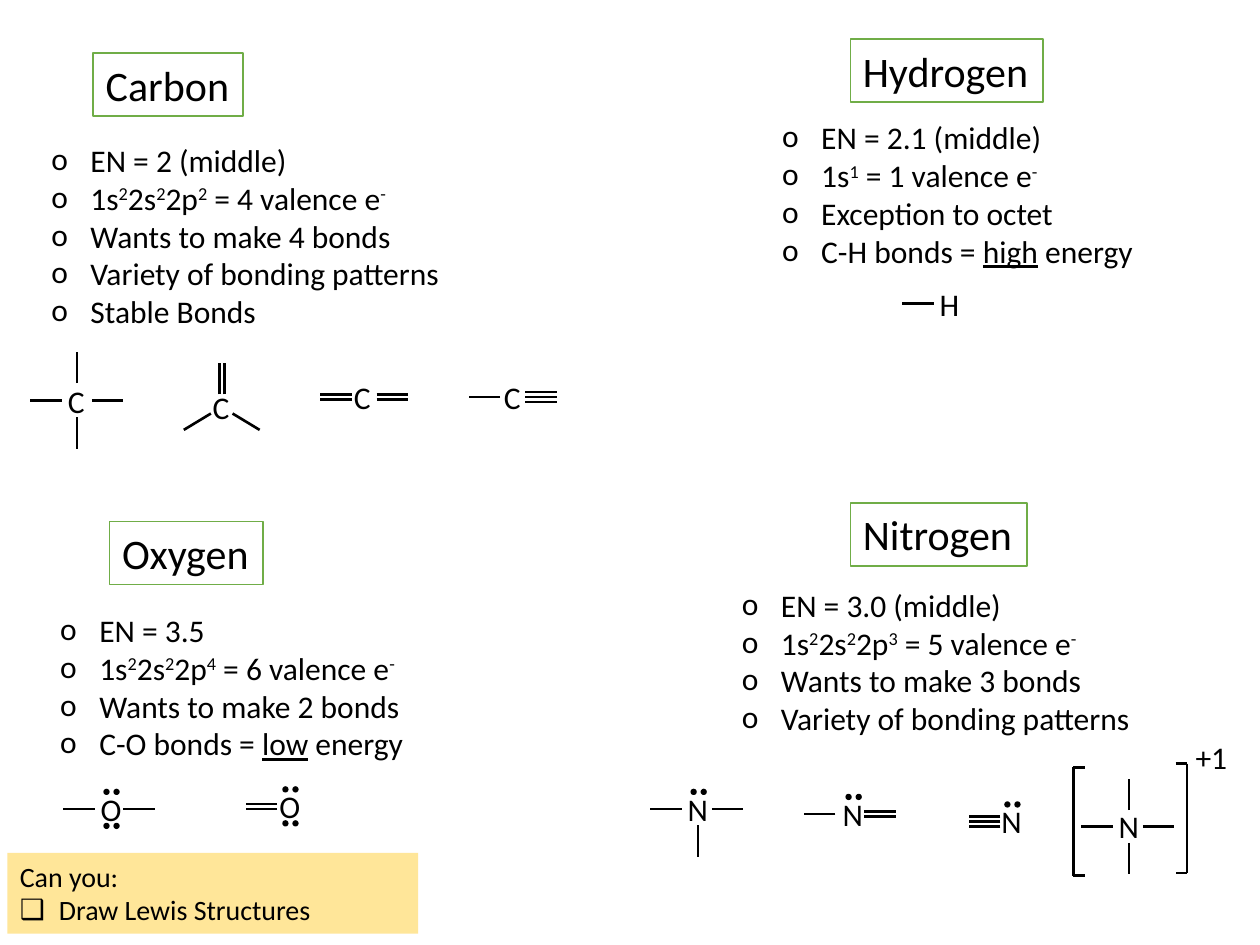
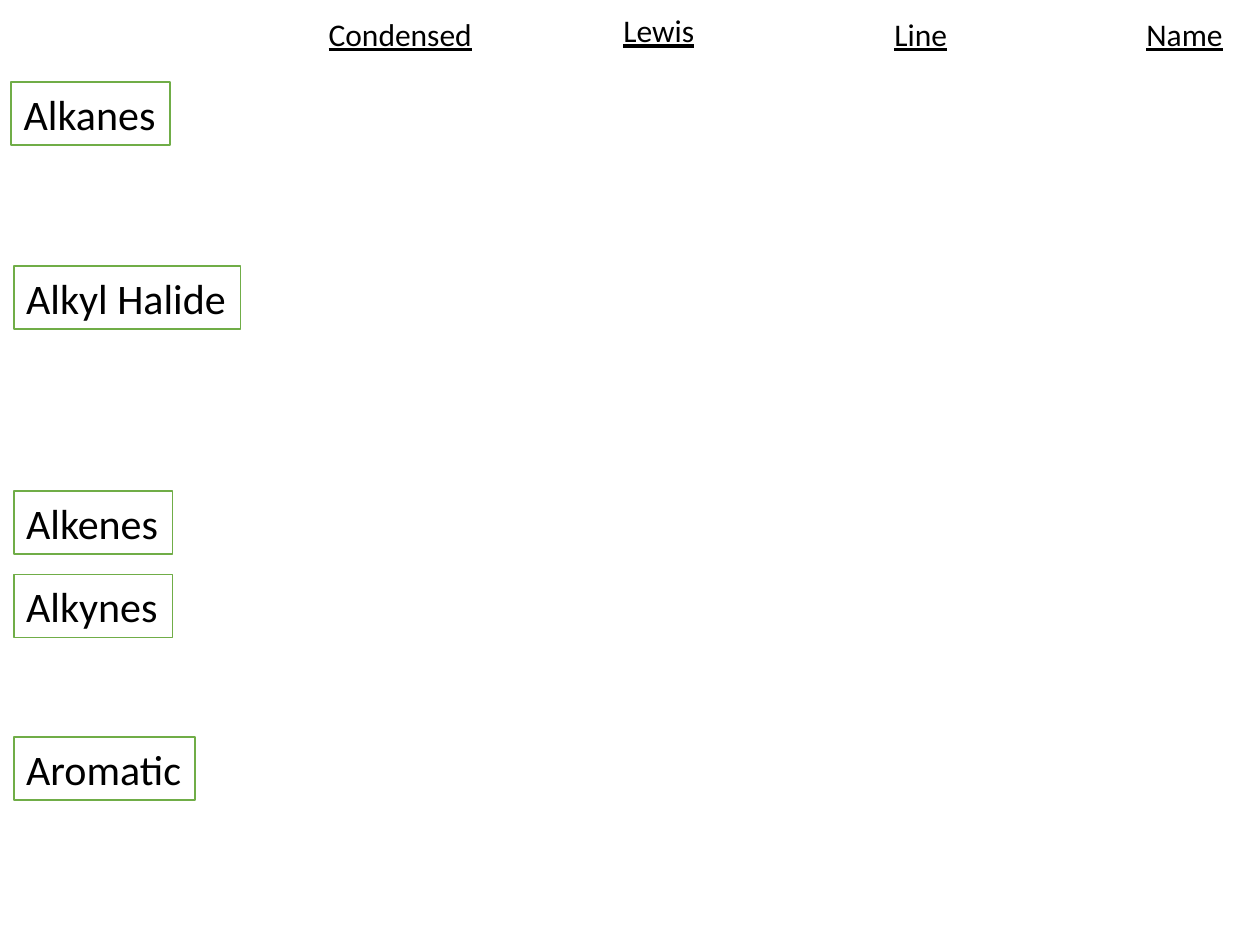
"""Builds two chemistry slides: bonding of four elements and hydrocarbon families."""
from lxml import etree
from pptx import Presentation, util as u
from pptx.dml.color import RGBColor
from pptx.enum import shapes, text
from pptx.oxml.ns import qn

BLACK = RGBColor(0x00, 0x00, 0x00)
WHITE = RGBColor(0xFF, 0xFF, 0xFF)
GREEN = RGBColor(0x70, 0xAD, 0x47)
YELLOW = RGBColor(0xFF, 0xE6, 0x99)
FONT = "Calibri"

deck = Presentation()
deck.slide_width, deck.slide_height = u.Inches(10), u.Inches(7.5)
CELL = deck.slide_width // 1000  # square grid of 1000 columns by 750 rows
HEADING_HEIGHT, LABEL_HEIGHT, INDENT = 50, 40, 31
BOND_LENGTH, BOND_GAP, DOT = 25, 4, 5


def write(shape, lines, size, wrap=False):
    """Write (bullet, text) lines; '|' parts runs, '^' raises and '_' underlines one."""
    frame = shape.text_frame
    frame.word_wrap = wrap
    frame.auto_size = text.MSO_AUTO_SIZE.SHAPE_TO_FIT_TEXT
    frame.vertical_anchor = text.MSO_ANCHOR.TOP
    for number, (bullet, line) in enumerate(lines):
        paragraph = frame.paragraphs[0] if number == 0 else frame.add_paragraph()
        paragraph.alignment = text.PP_ALIGN.LEFT
        if bullet:
            properties = paragraph._p.get_or_add_pPr()
            properties.set("marL", str(INDENT * CELL))
            properties.set("indent", str(-INDENT * CELL))
            etree.SubElement(properties, qn("a:buFont"), typeface=FONT)
            etree.SubElement(properties, qn("a:buChar"), char=bullet)
        for part in line.split("|"):
            run = paragraph.add_run()
            run.text = part.lstrip("^_")
            run.font.name, run.font.size = FONT, u.Pt(size)
            run.font.color.rgb = BLACK
            if part.startswith("_"):
                run.font.underline = True
            if part.startswith("^"):
                run.font._element.set("baseline", "30000")


def draw_line(canvas, *ends):
    """Draw a black line between two grid points."""
    line = canvas.add_connector(
        shapes.MSO_CONNECTOR.STRAIGHT, *(round(end * CELL) for end in ends))
    line.line.color.rgb, line.line.width = BLACK, u.Pt(1.5)
    etree.SubElement(line._element.spPr, qn("a:effectLst"))


elements, families = (deck.slides.add_slide(deck.slide_layouts[6]) for _ in range(2))

headings = [
    (elements, "Carbon", 74, 42, 119),
    (elements, "Hydrogen", 675, 31, 153),
    (elements, "Oxygen", 87, 414, 122),
    (elements, "Nitrogen", 675, 399, 140),
    (families, "Alkanes", 9, 65, 126),
    (families, "Alkyl Halide", 11, 211, 180),
    (families, "Alkenes", 11, 390, 126),
    (families, "Alkynes", 11, 456, 126),
    (families, "Aromatic", 11, 585, 144),
]
for slide, name, left, top, width in headings:
    heading = slide.shapes.add_shape(
        shapes.MSO_SHAPE.RECTANGLE,
        left * CELL, top * CELL, width * CELL, HEADING_HEIGHT * CELL)
    heading.shadow.inherit = False
    heading.fill.solid()
    heading.fill.fore_color.rgb = WHITE
    heading.line.color.rgb, heading.line.width = GREEN, u.Pt(1)
    write(heading, [("", name)], 24)

facts = [
    (31, 107, ["EN = 2 (middle)", "1s|^2|2s|^2|2p|^2| = 4 valence e|^-",
               "Wants to make 4 bonds", "Variety of bonding patterns", "Stable Bonds"]),
    (611, 89, ["EN = 2.1 (middle)", "1s|^1| = 1 valence e|^-",
               "Exception to octet", "C-H bonds = |_high| energy"]),
    (38, 480, ["EN = 3.5", "1s|^2|2s|^2|2p|^4| = 6 valence e|^-",
               "Wants to make 2 bonds", "C-O bonds = |_low| energy"]),
    (579, 460, ["EN = 3.0 (middle)", "1s|^2|2s|^2|2p|^3| = 5 valence e|^-",
                "Wants to make 3 bonds", "Variety of bonding patterns"]),
]
for left, top, lines in facts:
    fact_list = elements.shapes.add_textbox(
        left * CELL, top * CELL, 346 * CELL, (10 + 30 * len(lines)) * CELL)
    write(fact_list, [("o", line) for line in lines], 18, wrap=True)

COMPASS = {"N": (0, -1), "E": (1, 0), "S": (0, 1), "W": (-1, 0),
           "SE": (0.86, 0.52), "SW": (-0.86, 0.52)}
LONE_ABOVE, LONE_BELOW = -16, 11
# symbol, centre, bonds as direction: (order, distance from centre), lone pairs, charge
atoms = [
    ("C", 61, 318, {"N": (1, 14), "E": (1, 12), "S": (1, 13), "W": (1, 12)}, [], ""),
    ("C", 176, 323, {"N": (2, 10), "SE": (1, 10), "SW": (1, 10)}, [], ""),
    ("C", 288, 315, {"E": (2, 11), "W": (2, 9)}, [], ""),
    ("C", 407, 315, {"E": (3, 10), "W": (1, 10)}, [], ""),
    ("N", 554, 642, {"E": (1, 11), "S": (1, 13), "W": (1, 13)}, [LONE_ABOVE], ""),
    ("N", 677, 646, {"E": (2, 9), "W": (1, 14)}, [LONE_ABOVE], ""),
    ("N", 803, 652, {"W": (3, 9)}, [LONE_ABOVE], ""),
    ("N", 896, 656, {"N": (1, 13), "E": (1, 11), "S": (1, 13), "W": (1, 13)}, [], "+1"),
    ("O", 88, 642, {"E": (1, 10), "W": (1, 13)}, [LONE_ABOVE, LONE_BELOW], ""),
    ("O", 230, 640, {"W": (2, 10)}, [LONE_ABOVE, LONE_BELOW], ""),
    ("H", 754, 241, {"W": (1, 13)}, [], ""),
]
for symbol, x, y, bonds, lone_pairs, charge in atoms:
    atom = elements.shapes.add_group_shape().shapes
    width = 34 if symbol == "C" else 36
    letter = atom.add_textbox((x - width // 2) * CELL, (y - LABEL_HEIGHT // 2) * CELL,
                              width * CELL, LABEL_HEIGHT * CELL)
    write(letter, [("", symbol)], 18)
    for direction, (order, start) in bonds.items():
        dx, dy = COMPASS[direction]
        end = start + BOND_LENGTH
        for strand in range(order):
            shift = (strand - (order - 1) / 2) * BOND_GAP
            bond_x, bond_y = x - dy * shift, y + dx * shift
            draw_line(atom, bond_x + dx * start, bond_y + dy * start,
                      bond_x + dx * end, bond_y + dy * end)
    for rise in lone_pairs:
        for side in (-6, 2):
            electron = atom.add_shape(
                shapes.MSO_SHAPE.OVAL,
                (x + side) * CELL, (y + rise) * CELL, DOT * CELL, DOT * CELL)
            electron.shadow.inherit = False
            electron.fill.solid()
            electron.fill.fore_color.rgb = BLACK
            electron.line.fill.background()
    if charge:
        label = atom.add_textbox(939 * CELL, 581 * CELL, 46 * CELL, LABEL_HEIGHT * CELL)
        write(label, [("", charge)], 18)
        for spine, tip, top, bottom in [(852, 861, 609, 695), (942, 933, 606, 693)]:
            draw_line(atom, tip, top, spine, top)
            draw_line(atom, spine, top, spine, bottom)
            draw_line(atom, spine, bottom, tip, bottom)

goals = elements.shapes.add_shape(
    shapes.MSO_SHAPE.RECTANGLE, 6 * CELL, 677 * CELL, 326 * CELL, 64 * CELL)
goals.shadow.inherit = False
goals.fill.solid()
goals.fill.fore_color.rgb = YELLOW
goals.line.fill.background()
write(goals, [("", "Can you:"), ("❑", "Draw Lewis Structures")], 16, wrap=True)

for name, left, top, width in [("Condensed", 251, 7, 135), ("Lewis", 485, 4, 77),
                               ("Line", 700, 7, 63), ("Name", 900, 7, 81)]:
    column = families.shapes.add_textbox(
        left * CELL, top * CELL, width * CELL, LABEL_HEIGHT * CELL)
    write(column, [("", "_" + name)], 18)

deck.save("out.pptx")
